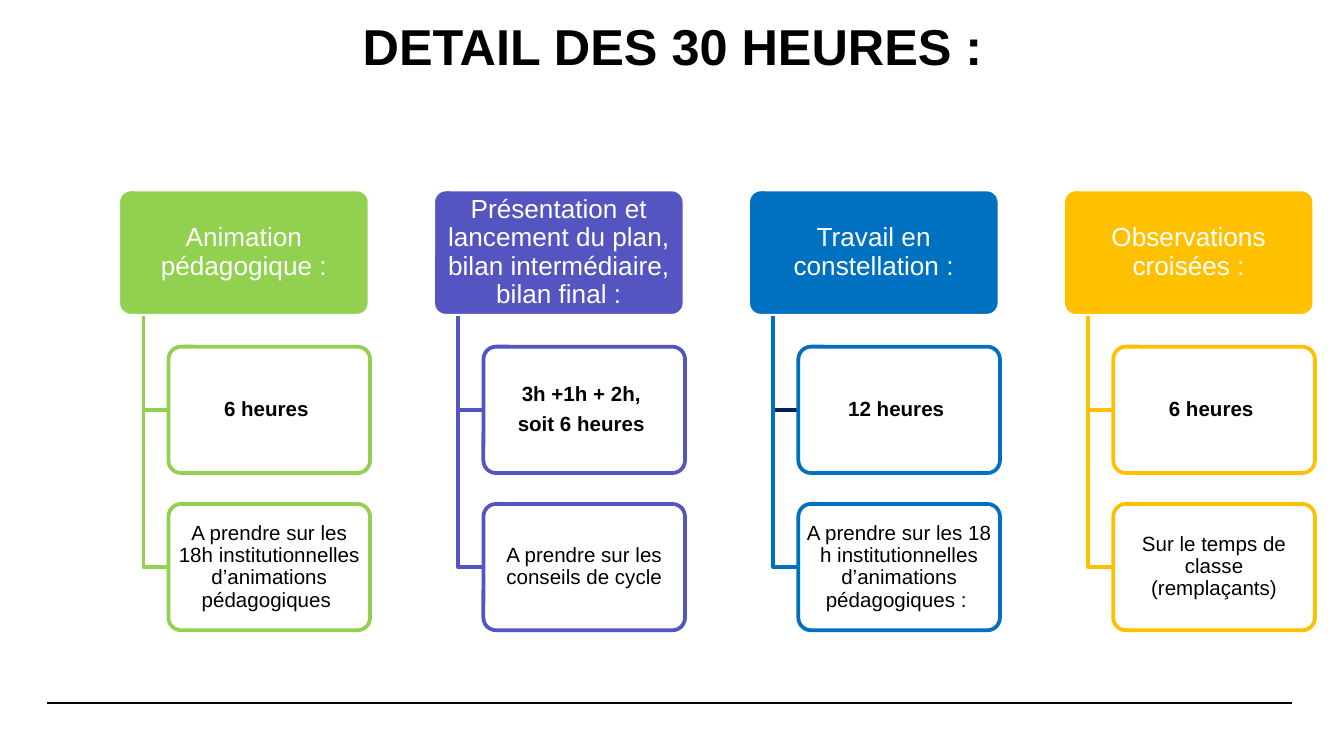
from lxml import etree
from pptx import Presentation
from pptx import util as u
from pptx.dml.color import RGBColor
from pptx.enum import shapes, text
from pptx.oxml.ns import qn

TITLE = "DETAIL DES 30 HEURES :"
COLUMNS = [
    {"heading": "Animation pédagogique :", "color": "92D050",
     "hours": ["6 heures "],
     "source": ["A prendre sur les 18h institutionnelles d’animations pédagogiques "]},
    {"heading": "Présentation et lancement du plan, bilan intermédiaire, bilan final :",
     "color": "5555C1",
     "hours": ["3h +1h + 2h, ", "soit 6 heures "],
     "source": ["A prendre sur les conseils de cycle"]},
    {"heading": "Travail en constellation :", "color": "0070C0", "hours_link": "002060",
     "hours": ["12 heures "],
     "source": ["A prendre sur les 18 h institutionnelles d’animations pédagogiques : "]},
    {"heading": "Observations croisées :", "color": "FFC000",
     "hours": ["6 heures "],
     "source": ["Sur le temps de classe (remplaçants)"]},
]
THEME = {"font": "Arial", "ink": "000000", "paper": "FFFFFF",
         "title": 27, "heading": 14, "detail": 11, "outline": 2, "rule": 0.8}

SLIDE_WIDTH = 10
SLIDE_HEIGHT = SLIDE_WIDTH * 9 / 16
LEFT, LAST_LEFT, TOP = 0.88, 7.91, 1.41
PITCH = (LAST_LEFT - LEFT) / (len(COLUMNS) - 1)
HEADING_WIDTH, DETAIL_WIDTH, BOX_HEIGHT = 1.87, 1.5, 0.94
ROW_PITCH = 1.17
STEM_OFFSET, DETAIL_OFFSET = HEADING_WIDTH / 10, HEADING_WIDTH / 5


def rgb(name):
    return RGBColor.from_string(THEME.get(name, name))


def write(shape, paragraphs, size, color="ink", bold=False, space_after=0):
    frame = shape.text_frame
    frame.word_wrap = True
    frame.auto_size = text.MSO_AUTO_SIZE.NONE
    frame.vertical_anchor = text.MSO_ANCHOR.MIDDLE
    for index, line in enumerate(paragraphs):
        paragraph = frame.paragraphs[0] if index == 0 else frame.add_paragraph()
        paragraph.text = line
        paragraph.alignment = text.PP_ALIGN.CENTER
        paragraph.line_spacing = 0.9
        paragraph.space_before = u.Pt(0)
        paragraph.space_after = u.Pt(space_after)
        font = paragraph.runs[0].font
        font.name, font.size, font.bold = THEME["font"], u.Pt(THEME[size]), bold
        font.color.rgb = rgb(color)


def add_box(slide, left, top, width, fill, line, inset, alpha=None):
    box = slide.shapes.add_shape(
        shapes.MSO_SHAPE.ROUNDED_RECTANGLE,
        u.Inches(left), u.Inches(top), u.Inches(width), u.Inches(BOX_HEIGHT))
    box.adjustments[0] = 0.1
    box.shadow.inherit = False
    box.fill.solid()
    box.fill.fore_color.rgb = rgb(fill)
    if alpha:
        color = box._element.spPr.find(qn("a:solidFill"))[0]
        etree.SubElement(color, qn("a:alpha")).set("val", str(alpha * 1000))
    box.line.color.rgb = rgb(line)
    box.line.width = u.Pt(THEME["outline"])
    frame = box.text_frame
    frame.margin_left = frame.margin_right = u.Inches(inset)
    frame.margin_top = frame.margin_bottom = u.Inches(0.02)
    return box


def add_elbow(slide, stem, top, right, bottom, color):
    """Draw an L-shaped link from a heading down to a detail box."""
    builder = slide.shapes.build_freeform(u.Inches(stem), u.Inches(top))
    builder.add_line_segments(
        [(u.Inches(stem), u.Inches(bottom)), (u.Inches(right), u.Inches(bottom))],
        close=False)
    elbow = builder.convert_to_shape()
    elbow.shadow.inherit = False
    elbow.fill.background()
    elbow.line.color.rgb = rgb(color)
    elbow.line.width = u.Pt(THEME["outline"])


def add_rule(slide, left, right, y):
    rule = slide.shapes.add_connector(
        shapes.MSO_CONNECTOR.STRAIGHT,
        u.Inches(left), u.Inches(y), u.Inches(right), u.Inches(y))
    rule.line.color.rgb = rgb("ink")
    rule.line.width = u.Pt(THEME["rule"])
    etree.SubElement(rule._element.spPr, qn("a:effectLst"))


def add_column(slide, left, column):
    color = column["color"]
    heading = add_box(slide, left, TOP, HEADING_WIDTH, color, "paper", 0.03)
    write(heading, [column["heading"]], "heading", color="paper")
    detail_left = left + DETAIL_OFFSET
    for row, key in enumerate(("hours", "source"), start=1):
        top = TOP + row * ROW_PITCH
        add_elbow(slide, left + STEM_OFFSET, TOP + BOX_HEIGHT, detail_left,
                  top + BOX_HEIGHT / 2, column.get(key + "_link", color))
        detail = add_box(slide, detail_left, top, DETAIL_WIDTH, "paper", color, 0.02, alpha=90)
        write(detail, column[key], "detail", bold=key == "hours", space_after=4.5)


def main():
    presentation = Presentation()
    presentation.slide_width = u.Inches(SLIDE_WIDTH)
    presentation.slide_height = u.Inches(SLIDE_HEIGHT)
    slide = presentation.slides.add_slide(presentation.slide_layouts[5])
    for left in (0.35, 0.39):
        add_rule(slide, left, left + 9.22, 5.23)
    title = slide.shapes.title
    title.left, title.top = u.Inches(0.88), u.Inches(0.1)
    title.width, title.height = u.Inches(8.25), u.Inches(0.53)
    write(title, [TITLE], "title", bold=True)
    for index, column in enumerate(COLUMNS):
        add_column(slide, LEFT + index * PITCH, column)
    presentation.save("out.pptx")


if __name__ == "__main__":
    main()
